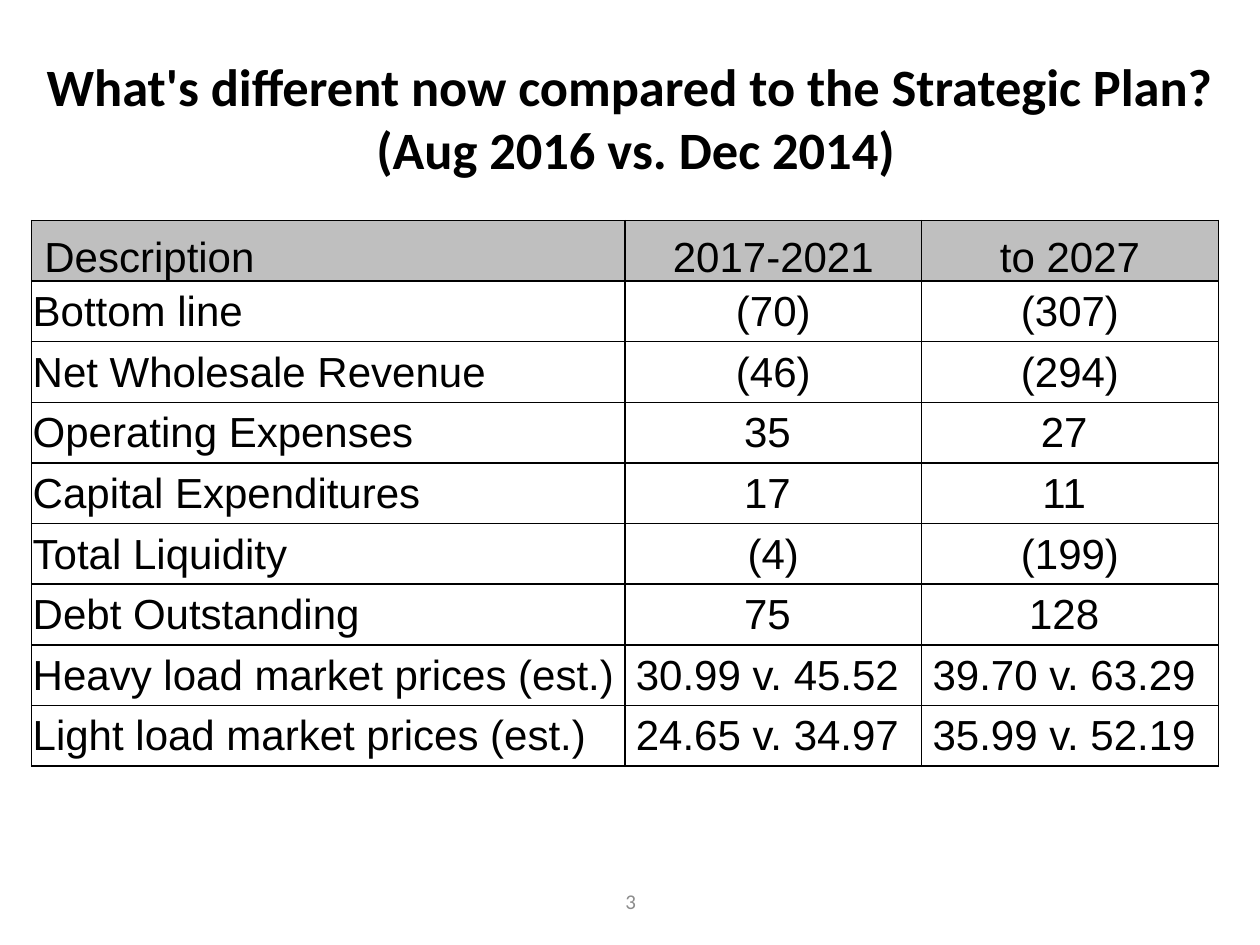
import pptx
import pptx.dml.color
import pptx.enum.text
import pptx.oxml
import pptx.oxml.ns
import pptx.util

WIDTH, HEIGHT = 10, 7.5
COLORS = {"text": "000000", "border": "000000", "header": "BFBFBF", "number": "8C8C8C"}
ALIGN = pptx.enum.text.PP_ALIGN
ANCHOR = pptx.enum.text.MSO_ANCHOR
COLUMN_SHARES = (0.5, 0.25, 0.25)
ROWS = (
    (" Description", "2017-2021", "to 2027"),
    ("Bottom line", "(70)", "(307)"),
    ("Net Wholesale Revenue", "(46)", "(294)"),
    ("Operating Expenses", "35 ", "27 "),
    ("Capital Expenditures", "17 ", "11 "),
    ("Total Liquidity", "(4)", "(199)"),
    ("Debt Outstanding", "75 ", "128 "),
    ("Heavy load market prices (est.)", "30.99 v. 45.52 ", "39.70 v. 63.29 "),
    ("Light load market prices (est.)", "24.65 v. 34.97 ", "35.99 v. 52.19 "),
)


def rgb(name):
    return pptx.dml.color.RGBColor.from_string(COLORS[name])


def inches(*lengths):
    return [pptx.util.Inches(length) for length in lengths]


def style_text(frame, font, size, color, align, bold=False):
    for para in frame.paragraphs:
        para.alignment = align
        for span in para.runs:
            span.font.name = font
            span.font.size = pptx.util.Pt(size)
            span.font.bold = bold
            span.font.color.rgb = rgb(color)


def add_text(page, area, text, size, color, bold=False):
    box = page.shapes.add_textbox(*inches(*area))
    frame = box.text_frame
    frame.word_wrap = True
    frame.margin_left = frame.margin_right = 0
    frame.vertical_anchor = ANCHOR.MIDDLE
    frame.text = text
    style_text(frame, "Calibri", size, color, ALIGN.CENTER, bold)


def add_borders(cell):
    properties = cell._tc.get_or_add_tcPr()
    for position, side in enumerate(("lnL", "lnR", "lnT", "lnB")):
        line = pptx.oxml.parse_xml(
            f'<a:{side} {pptx.oxml.ns.nsdecls("a")} w="{pptx.util.Pt(1)}">'
            f'<a:solidFill><a:srgbClr val="{COLORS["border"]}"/></a:solidFill>'
            f"</a:{side}>"
        )
        properties.insert(position, line)


def fill_cell(cell, text, is_header, align):
    cell.text_frame.text = text
    cell.margin_left = cell.margin_right = cell.margin_top = pptx.util.Inches(0.01)
    cell.margin_bottom = 0
    cell.vertical_anchor = ANCHOR.BOTTOM if is_header else ANCHOR.MIDDLE
    if is_header:
        cell.fill.solid()
        cell.fill.fore_color.rgb = rgb("header")
    else:
        cell.fill.background()
    style_text(cell.text_frame, "Arial", 24, "text", align)
    add_borders(cell)


def add_comparison(page, area):
    left, top, width, height = inches(*area)
    table = page.shapes.add_table(
        len(ROWS), len(COLUMN_SHARES), left, top, width, height
    ).table
    table.horz_banding = False
    for column, share in zip(table.columns, COLUMN_SHARES):
        column.width = int(width * share)
    for row_index, texts in enumerate(ROWS):
        table.rows[row_index].height = height // len(ROWS)
        for column_index, text in enumerate(texts):
            align = ALIGN.CENTER if column_index else ALIGN.LEFT
            fill_cell(table.cell(row_index, column_index), text, row_index == 0, align)


def main():
    deck = pptx.Presentation()
    deck.slide_width, deck.slide_height = inches(WIDTH, HEIGHT)
    page = deck.slides.add_slide(deck.slide_layouts[6])
    margin = WIDTH * 0.025
    title = "What's different now compared to the Strategic Plan?\v (Aug 2016 vs. Dec 2014)"
    add_text(page, (margin, HEIGHT * 0.04, WIDTH - 2 * margin, 1.25), title, 30, "text", True)
    add_comparison(page, (margin, 1.75, 9.42, 4.33))
    add_text(page, (3.42, 6.95, 3.17, 0.4), "3", 12, "number")
    deck.save("out.pptx")


if __name__ == "__main__":
    main()
